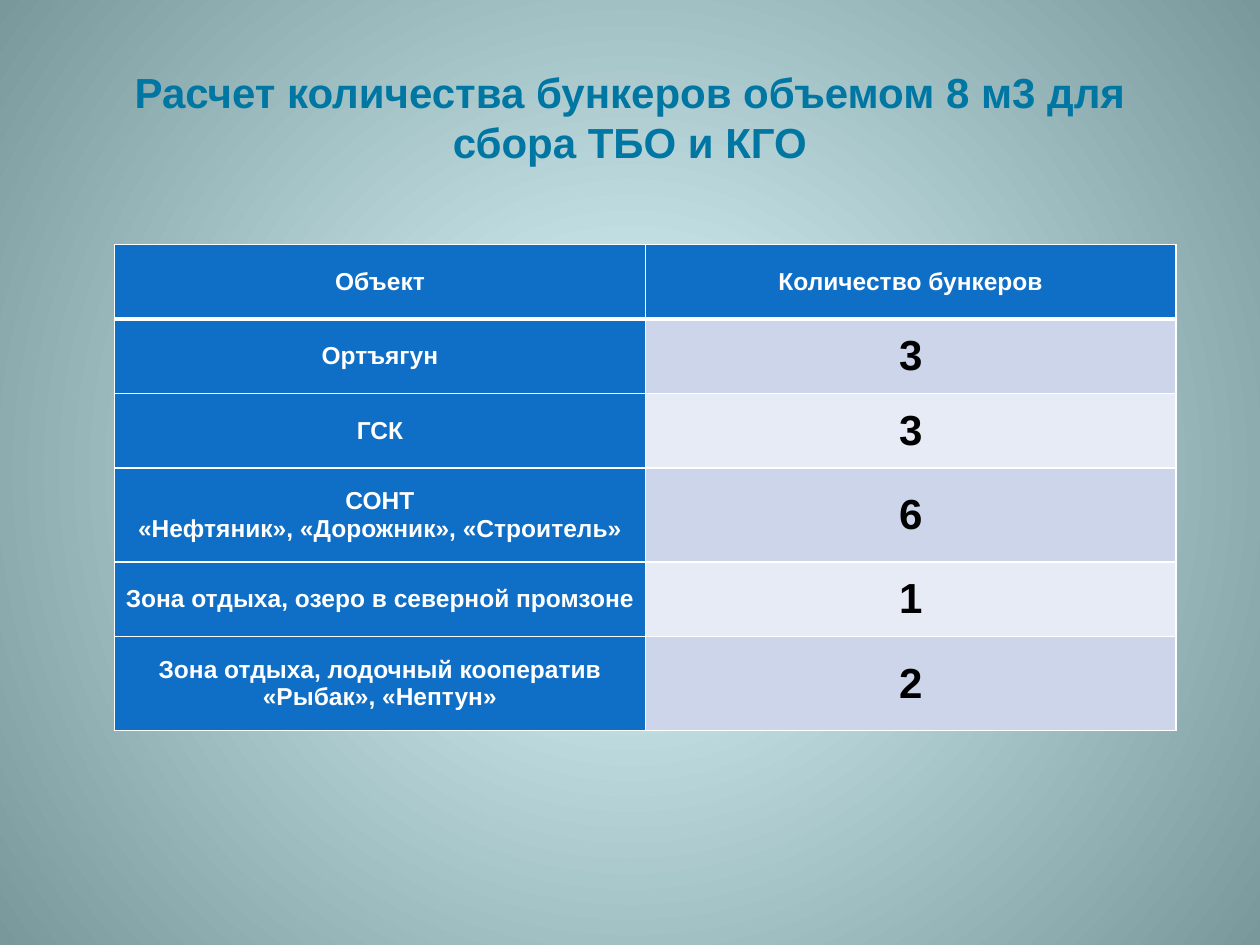
from typing import NamedTuple

from lxml.etree import SubElement
from pptx import Presentation
from pptx.dml.color import RGBColor
from pptx.enum.text import MSO_ANCHOR, PP_ALIGN
from pptx.oxml.ns import qn
from pptx.slide import Slide
from pptx.table import _Cell
from pptx.util import Cm, Length, Pt

FONT = "Arial"
TEAL = RGBColor(0x00, 0x76, 0xA3)
BLUE = RGBColor(0x0F, 0x6F, 0xC6)
BAND_DARK = RGBColor(0xCC, 0xD5, 0xEA)
BAND_LIGHT = RGBColor(0xE7, 0xEB, 0xF5)
WHITE = RGBColor(0xFF, 0xFF, 0xFF)
BLACK = RGBColor(0x00, 0x00, 0x00)
GLOW_CENTER = RGBColor(0xDE, 0xFB, 0xFF)
GLOW_EDGE = RGBColor(0x79, 0x98, 0x9C)

TITLE = "Расчет количества бункеров объемом 8 м3 для сбора ТБО и КГО"
HEADERS = ("Объект", "Количество бункеров")
COL_WIDTH = Cm(10.7)
ROW_HEIGHT = Cm(1.5)
TALL_ROW_HEIGHT = Cm(1.9)


class Site(NamedTuple):
    name: str
    bunkers: int
    height: Length = ROW_HEIGHT


SITES = (
    Site("Ортъягун", 3),
    Site("ГСК", 3),
    Site("СОНТ\n«Нефтяник», «Дорожник», «Строитель»", 6, TALL_ROW_HEIGHT),
    Site("Зона отдыха, озеро в северной промзоне", 1),
    Site("Зона отдыха, лодочный кооператив «Рыбак», «Нептун»", 2, TALL_ROW_HEIGHT),
)


def set_text(tf, text: str, size: int, color: RGBColor) -> None:
    tf.text = text
    tf.word_wrap = True
    for p in tf.paragraphs:
        p.alignment = PP_ALIGN.CENTER
        for r in p.runs:
            r.font.name = FONT
            r.font.size = Pt(size)
            r.font.bold = True
            r.font.color.rgb = color


def set_background(s: Slide) -> None:
    """Fill the slide with a circular gradient spreading from its centre."""
    fill = s.background.fill
    fill.gradient()
    stops = zip(fill.gradient_stops, (0, 1), (GLOW_CENTER, GLOW_EDGE))
    for stop, position, color in stops:
        stop.position = position
        stop.color.rgb = color
    grad = s.element.find(".//" + qn("a:gradFill"))
    grad.remove(grad.find(qn("a:lin")))
    circle = SubElement(grad, qn("a:path"), {"path": "circle"})
    SubElement(circle, qn("a:fillToRect"), dict.fromkeys("ltrb", "50000"))


def set_borders(cell: _Cell, top: float = 1, bottom: float = 1) -> None:
    tc_pr = cell._tc.get_or_add_tcPr()
    for side, width in (("L", 1), ("R", 1), ("T", top), ("B", bottom)):
        ln = SubElement(tc_pr, qn(f"a:ln{side}"), {"w": str(Pt(width))})
        solid = SubElement(ln, qn("a:solidFill"))
        SubElement(solid, qn("a:srgbClr"), {"val": str(WHITE)})


def fill_cell(cell: _Cell, text: str, size: int, color: RGBColor, fill: RGBColor) -> None:
    set_text(cell.text_frame, text, size, color)
    cell.vertical_anchor = MSO_ANCHOR.MIDDLE
    cell.margin_left = cell.margin_right = Cm(0.18)
    cell.margin_top = cell.margin_bottom = 0
    cell.fill.solid()
    cell.fill.fore_color.rgb = fill


def add_title(s: Slide) -> None:
    sp = s.shapes.add_textbox(Cm(1.27), Cm(0.76), Cm(22.86), Cm(3.18))
    sp.text_frame.vertical_anchor = MSO_ANCHOR.MIDDLE
    set_text(sp.text_frame, TITLE, 24, TEAL)


def add_bunker_table(s: Slide) -> None:
    heights = [ROW_HEIGHT] + [site.height for site in SITES]
    table = s.shapes.add_table(
        len(heights), 2, Cm(2.31), Cm(4.93), 2 * COL_WIDTH, sum(heights)
    ).table
    for column in table.columns:
        column.width = COL_WIDTH
    for row, height in zip(table.rows, heights):
        row.height = height

    for col, header in enumerate(HEADERS):
        cell = table.cell(0, col)
        set_borders(cell, bottom=3)
        fill_cell(cell, header, 14, WHITE, BLUE)

    for row, site in enumerate(SITES, start=1):
        name, count = table.cell(row, 0), table.cell(row, 1)
        for cell in (name, count):
            set_borders(cell, top=3 if row == 1 else 1)
        fill_cell(name, site.name, 14, WHITE, BLUE)
        band = BAND_DARK if row % 2 else BAND_LIGHT
        fill_cell(count, str(site.bunkers), 24, BLACK, band)


def main() -> None:
    prs = Presentation()
    prs.slide_width, prs.slide_height = Cm(25.4), Cm(19.05)
    s = prs.slides.add_slide(prs.slide_layouts[6])
    set_background(s)
    add_title(s)
    add_bunker_table(s)
    prs.save("out.pptx")


if __name__ == "__main__":
    main()
